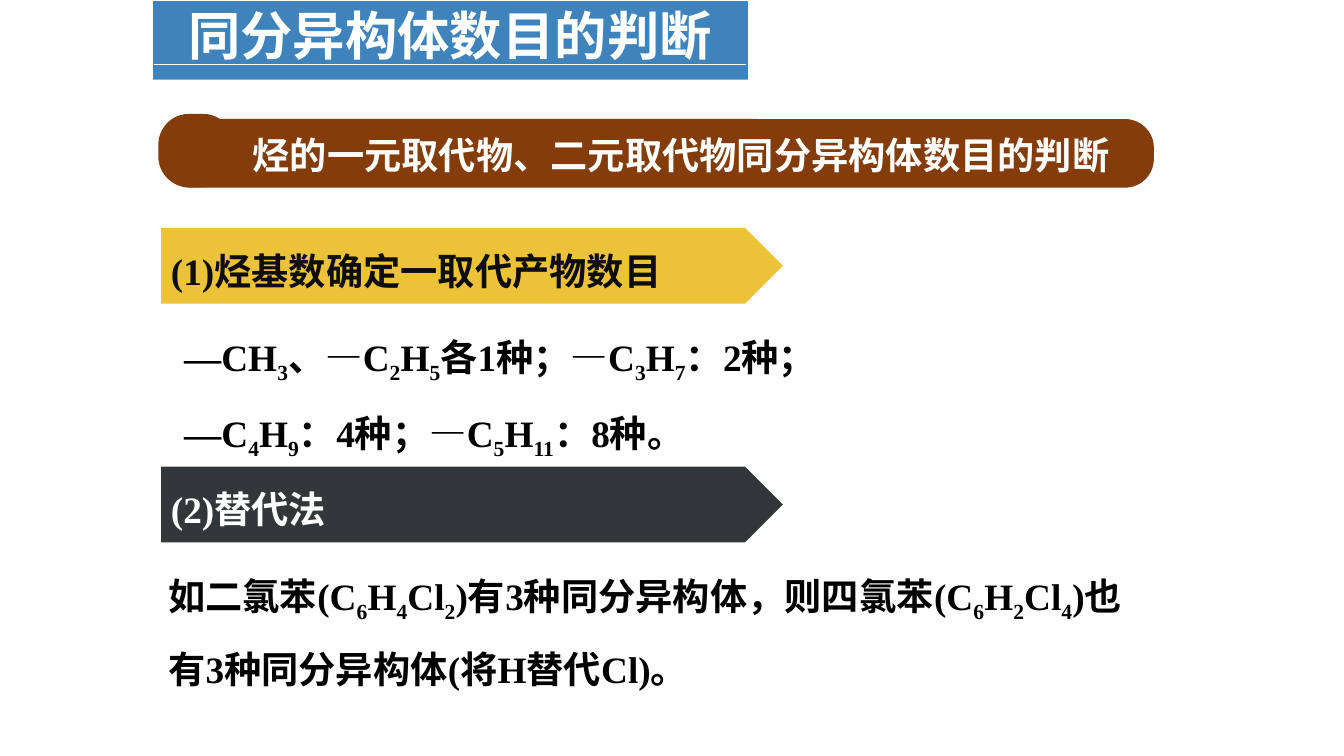
from pptx import Presentation
from pptx.util import Cm, Pt
from pptx.dml.color import RGBColor
from pptx.enum.shapes import MSO_SHAPE, MSO_CONNECTOR
from pptx.enum.text import PP_ALIGN, MSO_ANCHOR
from pptx.oxml.ns import qn
from lxml.etree import SubElement

# Content: parts between underscores are subscripts
TITLE = "同分异构体数目的判断"
TOPIC = "烃的一元取代物、二元取代物同分异构体数目的判断"
HEADS = [
    ("(1)烃基数确定一取代产物数目", 5.74, "ECC238", "0D0D0D"),
    ("(2)替代法", 11.76, "33373A", "FFFFFF"),
]
BODIES = [
    (["—CH_3_、—C_2_H_5_各1种；—C_3_H_7_：2种；",
      "—C_4_H_9_：4种；—C_5_H_11_：8种。"], (4.39, 7.65, 18.85, 3.68)),
    (["如二氯苯(C_6_H_4_Cl_2_)有3种同分异构体，则四氯苯(C_6_H_2_Cl_4_)"
      "也有3种同分异构体(将H替代Cl)。"], (3.99, 13.67, 25.1, 4.24)),
]
PILLS = [(4.06, 3, 25.02, 1.73), (3.99, 2.87, 1.9, 1.85), (4.04, 2.95, 1.8, 1.73)]
SANS, SERIF = "Noto Sans CJK SC", "Times New Roman"
WHITE, BLACK, BLUE, BROWN = "FFFFFF", "000000", "3F83BC", "843C0B"

deck = Presentation()
deck.slide_width, deck.slide_height = Cm(33.87), Cm(19.05)
slide = deck.slides.add_slide(deck.slide_layouts[6])
shapes = slide.shapes


def paint(part, color):
    part.rgb = RGBColor.from_string(color)


def block(kind, box, color):
    shape = shapes.add_shape(kind, *map(Cm, box))
    shape.shadow.inherit = False
    shape.fill.solid()
    paint(shape.fill.fore_color, color)
    shape.line.fill.background()
    return shape


def write(shape, lines, color, font=SERIF, size=26.6, space=1.0,
          align=PP_ALIGN.LEFT, anchor=MSO_ANCHOR.TOP):
    frame = shape.text_frame
    frame.word_wrap = True
    frame.vertical_anchor = anchor
    for i, line in enumerate(lines):
        para = frame.add_paragraph() if i else frame.paragraphs[0]
        para.alignment, para.line_spacing = align, space
        for j, text in enumerate(line.split("_")):
            run = para.add_run()
            run.text = text
            run.font.name, run.font.size, run.font.bold = font, Pt(size), True
            paint(run.font.color, color)
            props = run.font._element
            SubElement(props, qn("a:ea"), typeface=SANS)
            if j % 2:
                props.set("baseline", "-25000")
    return frame


def label(box, *args, **style):
    return write(shapes.add_textbox(*map(Cm, box)), *args, **style)


# Title band with its thin rule
block(MSO_SHAPE.RECTANGLE, (3.86, 0.03, 14.99, 1.98), BLUE)
rule = shapes.add_connector(MSO_CONNECTOR.STRAIGHT, Cm(3.89), Cm(1.63), Cm(18.8), Cm(1.63))
paint(rule.line.color, WHITE)
rule.line.width = Pt(0.75)
SubElement(rule._element.spPr, qn("a:effectLst"))
label((3.68, -0.05, 15.34, 5.05), [TITLE], WHITE, font=SANS, size=37.4,
      align=PP_ALIGN.CENTER)

# Topic pill
for box in PILLS:
    block(MSO_SHAPE.ROUNDED_RECTANGLE, box, BROWN).adjustments[0] = 0.42
topic = label((6.22, 3.18, 22.5, 1.6), [TOPIC], WHITE, font=SANS)
topic.margin_left = topic.margin_right = Cm(0.15)
topic.margin_top = topic.margin_bottom = Cm(0.15)

# Section arrows
for text, top, fill, ink in HEADS:
    arrow = block(MSO_SHAPE.PENTAGON, (4.06, top, 15.67, 1.91), fill)
    write(arrow, [text], ink, space=1.2, anchor=MSO_ANCHOR.MIDDLE)

# Section texts
for lines, box in BODIES:
    label(box, lines, BLACK, space=1.5)

deck.save("out.pptx")
